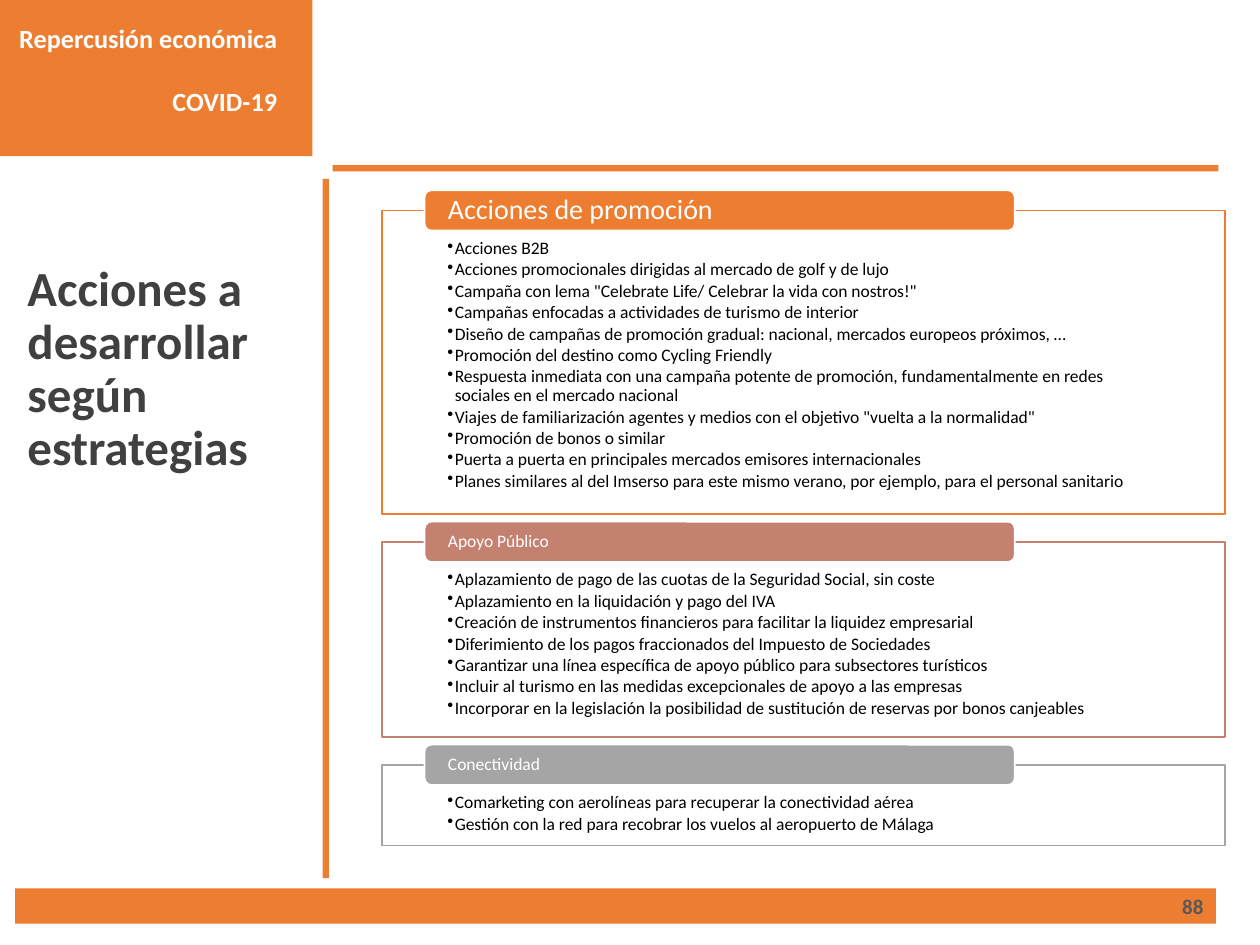
from lxml import etree
from pptx import Presentation
from pptx.dml.color import RGBColor
from pptx.enum.shapes import MSO_SHAPE
from pptx.enum.text import MSO_ANCHOR, PP_ALIGN
from pptx.oxml.ns import qn
from pptx.util import Inches, Pt

RECT, ROUND = MSO_SHAPE.RECTANGLE, MSO_SHAPE.ROUNDED_RECTANGLE
TOP, MIDDLE = MSO_ANCHOR.TOP, MSO_ANCHOR.MIDDLE
LEFT, RIGHT = PP_ALIGN.LEFT, PP_ALIGN.RIGHT

ORANGE = RGBColor(0xED, 0x7D, 0x31)
CLAY = RGBColor(0xC4, 0x81, 0x70)
GREY = RGBColor(0xA5, 0xA5, 0xA5)
WHITE = RGBColor(0xFF, 0xFF, 0xFF)
BLACK = RGBColor(0x00, 0x00, 0x00)
TITLE_GREY = RGBColor(0x40, 0x40, 0x40)
NUMBER_GREY = RGBColor(0x59, 0x59, 0x59)

FONT = "Calibri"
PANEL_GAP = 0.22
TAB_RISE = 0.16

SECTIONS = [
    ("Acciones de promoción", 16, ORANGE, 2.41, [
        "Acciones B2B",
        "Acciones promocionales dirigidas al mercado de golf y de lujo",
        'Campaña con lema "Celebrate Life/ Celebrar la vida con nostros!"',
        "Campañas enfocadas a actividades de turismo de interior",
        "Diseño de campañas de promoción gradual: nacional, mercados europeos próximos, …",
        "Promoción del destino como Cycling Friendly",
        "Respuesta inmediata con una campaña potente de promoción, fundamentalmente en redes "
        "sociales en el mercado nacional",
        'Viajes de familiarización agentes y medios con el objetivo "vuelta a la normalidad"',
        "Promoción de bonos o similar",
        "Puerta a puerta en principales mercados emisores internacionales",
        "Planes similares al del Imserso para este mismo verano, por ejemplo, para el personal sanitario",
    ]),
    ("Apoyo Público", 10, CLAY, 1.55, [
        "Aplazamiento de pago de las cuotas de la Seguridad Social, sin coste",
        "Aplazamiento en la liquidación y pago del IVA",
        "Creación de instrumentos financieros para facilitar la liquidez empresarial",
        "Diferimiento de los pagos fraccionados del Impuesto de Sociedades",
        "Garantizar una línea específica de apoyo público para subsectores turísticos",
        "Incluir al turismo en las medidas excepcionales de apoyo a las empresas",
        "Incorporar en la legislación la posibilidad de sustitución de reservas por bonos canjeables",
    ]),
    ("Conectividad", 10, GREY, 0.64, [
        "Comarketing con aerolíneas para recuperar la conectividad aérea",
        "Gestión con la red para recobrar los vuelos al aeropuerto de Málaga",
    ]),
]


def add_box(slide, kind, box, fill, line=None):
    sp = slide.shapes.add_shape(kind, *map(Inches, box))
    sp.shadow.inherit = False
    sp.fill.solid()
    sp.fill.fore_color.rgb = fill
    if line is None:
        sp.line.fill.background()
    else:
        sp.line.color.rgb = line
        sp.line.width = Pt(1)
    return sp


def set_text(sp, lines, size, color, bold=False, align=LEFT, anchor=TOP,
             margins=(0.1, 0.05, 0.1, 0.05), spacing=1.0):
    tf = sp.text_frame
    tf.word_wrap = True
    tf.vertical_anchor = anchor
    tf.margin_left, tf.margin_top, tf.margin_right, tf.margin_bottom = map(Inches, margins)
    tf.text = "\n".join(lines)
    for p in tf.paragraphs:
        p.alignment = align
        p.line_spacing = spacing
        for r in p.runs:
            r.font.name = FONT
            r.font.size = Pt(size)
            r.font.bold = bold
            r.font.color.rgb = color
    return tf.paragraphs


def add_bullet(p):
    p.space_after = Pt(1.4)
    pPr = p._p.get_or_add_pPr()
    pPr.set("marL", str(Inches(0.06)))
    pPr.set("indent", str(-Inches(0.06)))
    etree.SubElement(pPr, qn("a:buChar")).set("char", "•")


def add_corner(slide, box):
    sp = add_box(slide, RECT, box, ORANGE)
    lines = set_text(sp, ["Repercusión económica", "COVID-19"], 15, WHITE, True, RIGHT,
                     margins=(0.1, 0.2, 0.28, 0.05))
    lines[1].space_before = Pt(18)


def add_title(slide, box):
    tb = slide.shapes.add_textbox(*map(Inches, box))
    set_text(tb, ["Acciones a desarrollar según estrategias"], 28, TITLE_GREY, True,
             margins=(0.1, 0.68, 0.1, 0.05), spacing=0.9)


def add_footer(slide, box, number):
    sp = add_box(slide, RECT, box, ORANGE)
    set_text(sp, [number], 12, NUMBER_GREY, True, RIGHT, MIDDLE)


def add_section(slide, box, heading, size, color, items):
    left, top, width, _ = box
    panel = add_box(slide, RECT, box, WHITE, color)
    fill_color = panel._element.spPr.find(qn("a:solidFill"))[0]
    etree.SubElement(fill_color, qn("a:alpha")).set("val", "90000")
    for p in set_text(panel, items, 10, BLACK, margins=(0.52, 0.23, 0.52, 0.08), spacing=0.9):
        add_bullet(p)
    tab = add_box(slide, ROUND, (left + 0.34, top - TAB_RISE, width * 0.7, 2 * TAB_RISE),
                  color, WHITE)
    set_text(tab, [heading], size, WHITE, anchor=MIDDLE, margins=(0.17, 0, 0.17, 0), spacing=0.9)


def add_sections(slide, left, top, width):
    for heading, size, color, height, items in SECTIONS:
        add_section(slide, (left, top, width, height), heading, size, color, items)
        top += height + PANEL_GAP


def main():
    prs = Presentation()
    prs.slide_width, prs.slide_height = Inches(10), Inches(7.5)
    slide = prs.slides.add_slide(prs.slide_layouts[6])
    add_footer(slide, (0.12, 7.05, 9.53, 0.28), "88")
    add_corner(slide, (0, -0.02, 2.48, 1.26))
    add_box(slide, RECT, (2.64, 1.31, 7.03, 0.05), ORANGE)
    add_box(slide, RECT, (2.56, 1.42, 0.05, 5.55), ORANGE)
    add_title(slide, (0.12, 1.42, 2.47, 5.49))
    add_sections(slide, 3.03, 1.67, 6.69)
    prs.save("out.pptx")


if __name__ == "__main__":
    main()
